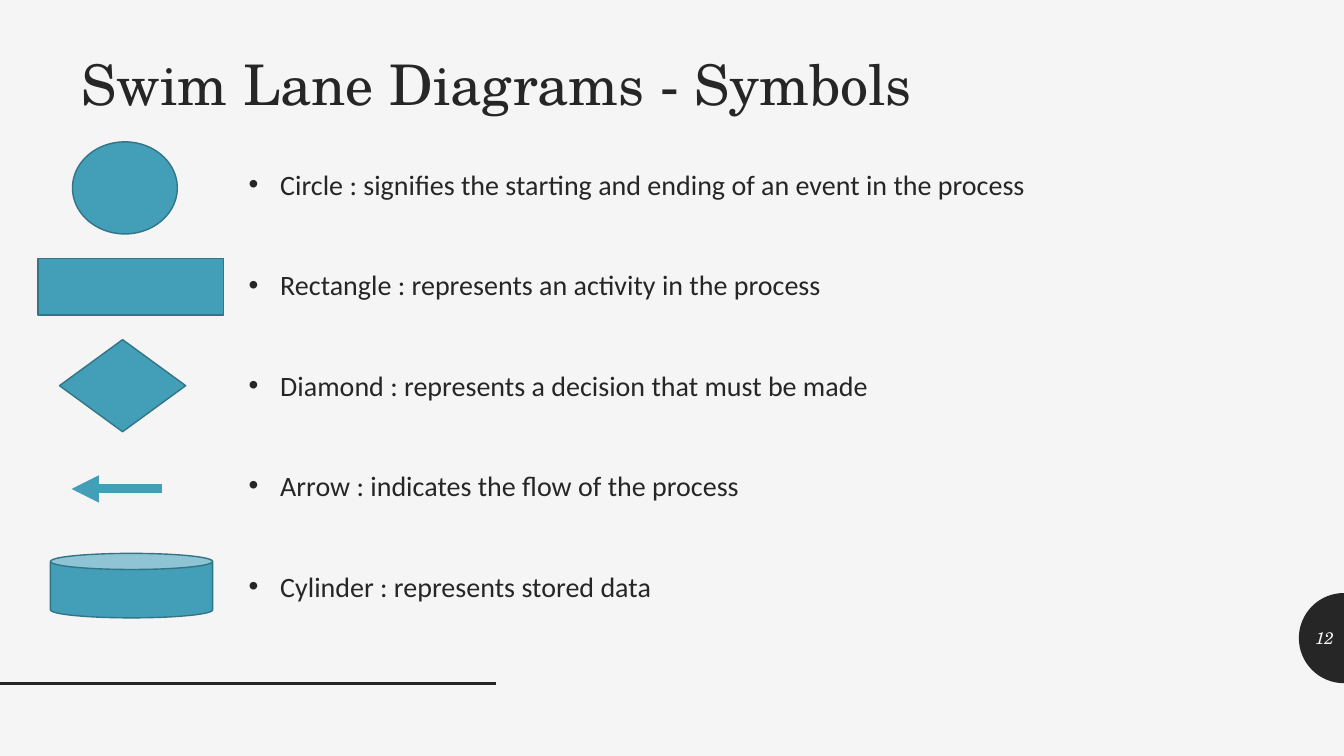
import math
import pptx
import pptx.util
import pptx.dml.color
import pptx.enum.shapes
import pptx.enum.text
import pptx.oxml
import pptx.oxml.ns
from pptx.util import Pt

INK, PAPER, TEAL, EDGE = "262626", "F5F5F5", "439EB7", "327587"
SERIF = "TeX Gyre Schola"
kinds = pptx.enum.shapes.MSO_SHAPE
anchors = pptx.enum.text.MSO_ANCHOR


def paint(color_format, color):
    color_format.rgb = pptx.dml.color.RGBColor.from_string(color)


def write(para, text, font, size, color):
    para.text = text
    for span in para.runs:
        span.font.name = font
        span.font.size = Pt(size)
        paint(span.font.color, color)


deck = pptx.Presentation()
deck.slide_width, deck.slide_height = Pt(960), Pt(540)
page = deck.slides.add_slide(deck.slide_layouts[5])
page.background.fill.solid()
paint(page.background.fill.fore_color, PAPER)

center_y, radius, steps = 455.8, 32.2, 32
angles = [math.pi * (0.5 + step / steps) for step in range(steps + 1)]
arc = [(Pt(960 + radius * math.cos(angle)), Pt(center_y + radius * math.sin(angle)))
       for angle in angles]
builder = page.shapes.build_freeform(*arc[0], scale=1.0)
builder.add_line_segments(arc[1:], close=True)
badge = builder.convert_to_shape()
badge.shadow.inherit = False
badge.fill.solid()
paint(badge.fill.fore_color, INK)
badge.line.fill.background()

title = page.shapes.title
title.left, title.top, title.width, title.height = Pt(51.1), Pt(37.4), Pt(709.2), Pt(65.5)
title.text_frame.vertical_anchor = anchors.TOP
title.text_frame.word_wrap = True
para = title.text_frame.paragraphs[0]
write(para, "Swim Lane Diagrams - Symbols", SERIF, 40, INK)
para.alignment = pptx.enum.text.PP_ALIGN.LEFT
para.line_spacing = 0.9

meanings = [
    "Circle : signifies the starting and ending of an event in the process",
    "Rectangle : represents an activity in the process",
    "Diamond : represents a decision that must be made",
    "Arrow : indicates the flow of the process",
    "Cylinder : represents stored data",
]
box = page.shapes.add_textbox(Pt(170.6), Pt(113), Pt(696.2), Pt(357.1))
box.text_frame.word_wrap = True
for index, meaning in enumerate(meanings):
    para = box.text_frame.add_paragraph() if index else box.text_frame.paragraphs[0]
    write(para, meaning, "Calibri", 20, INK)
    para.line_spacing = 1.12
    para.space_before = Pt(44.9 if index else 9)
    properties = para._p.get_or_add_pPr()
    properties.set("marL", str(Pt(22.5)))
    properties.set("indent", str(-Pt(22.5)))
    for tag, name, value in [("a:buFont", "typeface", "Arial"), ("a:buChar", "char", "•")]:
        bullet = pptx.oxml.parse_xml(f"<{tag} {pptx.oxml.ns.nsdecls('a')}/>")
        bullet.set(name, value)
        properties.append(bullet)

number = page.shapes.add_textbox(Pt(927.8), Pt(441.4), Pt(32.2), Pt(28.8))
number.text_frame.word_wrap = True
number.text_frame.vertical_anchor = anchors.MIDDLE
para = number.text_frame.paragraphs[0]
write(para, "12", SERIF, 12, PAPER)
para.alignment = pptx.enum.text.PP_ALIGN.RIGHT
para.space_after = Pt(6)
para.runs[0].font.italic = True

symbols = [
    (kinds.OVAL, 51.8, 101.3, 74.9, 65.8),
    (kinds.RECTANGLE, 27.2, 184.8, 132.5, 40.3),
    (kinds.DIAMOND, 42.5, 242.6, 90.2, 65.8),
    (kinds.CAN, 36, 395.3, 115.9, 46.1),
]
for kind, left, top, width, height in symbols:
    symbol = page.shapes.add_shape(kind, Pt(left), Pt(top), Pt(width), Pt(height))
    symbol.shadow.inherit = False
    symbol.fill.solid()
    paint(symbol.fill.fore_color, TEAL)
    paint(symbol.line.color, EDGE)
    symbol.line.width = Pt(1)

lines = [
    (0, 354.2, 488.2, INK, 2, False),
    (51.1, 115.7, 349.2, TEAL, 6.5, True),
]
for start, end, y, color, weight, pointed in lines:
    line = page.shapes.add_connector(
        pptx.enum.shapes.MSO_CONNECTOR.STRAIGHT, Pt(start), Pt(y), Pt(end), Pt(y))
    paint(line.line.color, color)
    line.line.width = Pt(weight)
    namespace = pptx.oxml.ns.nsdecls("a")
    if pointed:
        line.line._get_or_add_ln().append(
            pptx.oxml.parse_xml(f'<a:headEnd {namespace} type="triangle"/>'))
    line._element.spPr.append(pptx.oxml.parse_xml(f"<a:effectLst {namespace}/>"))

deck.save("out.pptx")
